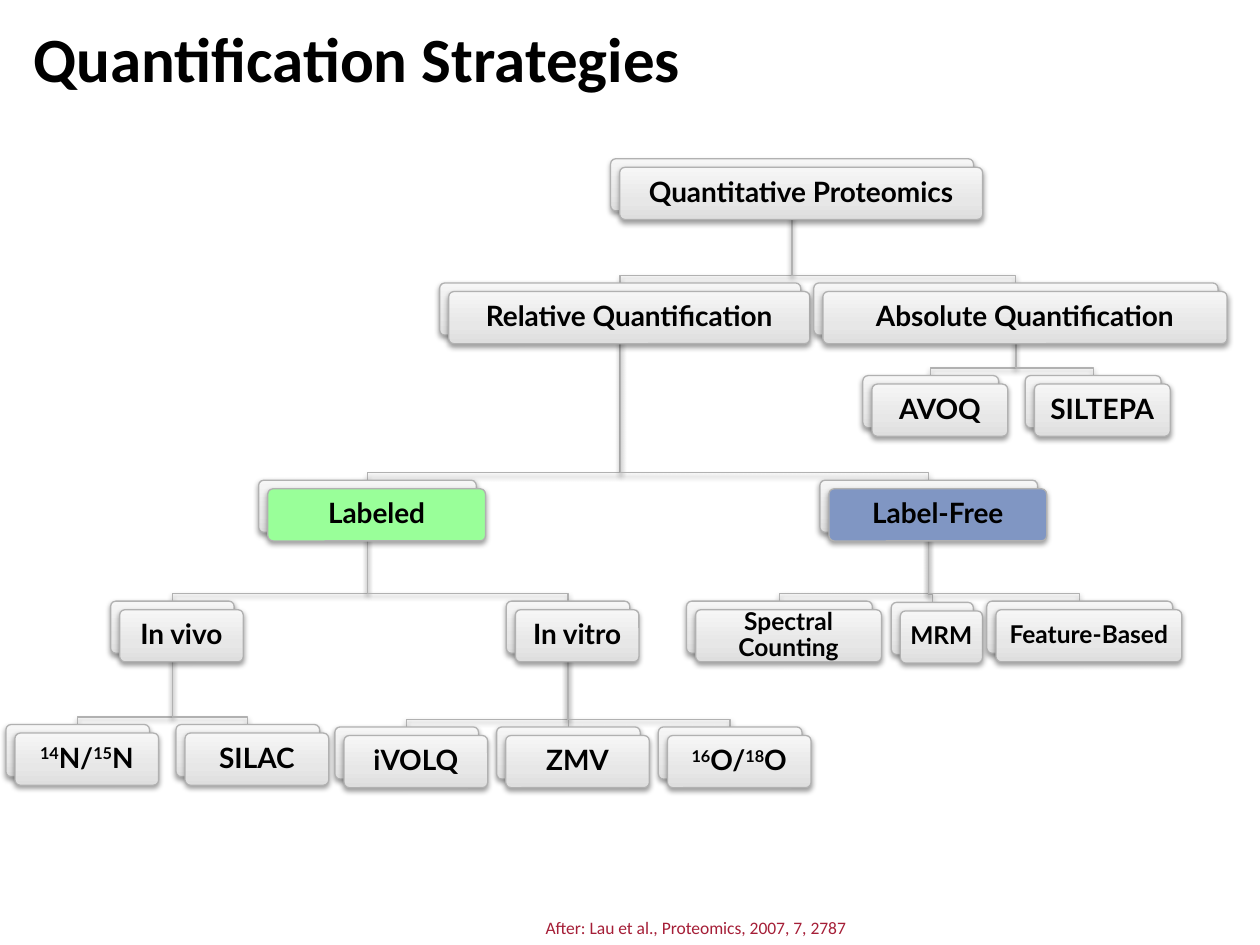
"""Build a slide with a tree of proteomics quantification strategies."""
from copy import deepcopy
from dataclasses import dataclass

from lxml import etree
from pptx import Presentation
from pptx.dml.color import RGBColor
from pptx.enum.shapes import MSO_SHAPE
from pptx.enum.text import MSO_ANCHOR, MSO_AUTO_SIZE, PP_ALIGN
from pptx.oxml.ns import qn
from pptx.util import Pt

ROUNDED = MSO_SHAPE.ROUNDED_RECTANGLE
MIDDLE, TOP = MSO_ANCHOR.MIDDLE, MSO_ANCHOR.TOP
LEFT, CENTER, RIGHT = PP_ALIGN.LEFT, PP_ALIGN.CENTER, PP_ALIGN.RIGHT
FIT_SHAPE, NO_FIT = MSO_AUTO_SIZE.SHAPE_TO_FIT_TEXT, MSO_AUTO_SIZE.NONE

COLORS = {
    "text": "000000",
    "source": "A51E37",
    "outline": "B1B1B1",
    "shadow": "000000",
    "labeled": "99FF99",
    "label_free": "8096C3",
}
CARD_GRADIENT = ((0, "DEDEDE"), (0.35, "E7E7E7"), (1, "F6F6F6"))
CARD_HEIGHT = 29.8
CARD_SHIFT = (5.2, 4.9)
BRANCH_DROP = 4.3
TITLE_FONT = {"name": "Calibri", "size": Pt(36), "bold": True}
SOURCE_FONT = {"name": "Calibri", "size": Pt(10), "bold": False}


@dataclass(frozen=True)
class Strategy:
    """A tree node; carets in the label enclose superscripts."""
    label: str
    parent: str
    left: float
    top: float
    width: float
    size: int = 16
    fill: str = ""

    @property
    def center(self) -> float:
        return self.left + self.width / 2

    @property
    def bottom(self) -> float:
        return self.top + CARD_HEIGHT


STRATEGIES = (
    Strategy("Quantitative Proteomics", "", 348.9, 90.7, 207.4),
    Strategy("Relative Quantification", "Quantitative Proteomics", 251.2, 161.7, 206.4),
    Strategy("Labeled", "Relative Quantification", 147.8, 274.4, 124.4, fill="labeled"),
    Strategy("In vivo", "Labeled", 63.2, 343.5, 70.6),
    Strategy("^14^N/^15^N", "In vivo", 3.4, 414, 82.1),
    Strategy("SILAC", "In vivo", 100.6, 414, 82.1),
    Strategy("In vitro", "Labeled", 289.3, 343.5, 70.6),
    Strategy("iVOLQ", "In vitro", 191.4, 415.4, 82.1),
    Strategy("ZMV", "In vitro", 283.8, 415.4, 82.1),
    Strategy("^16^O/^18^O", "In vitro", 376.2, 415.4, 82.1),
    Strategy("Label-Free", "Relative Quantification", 468.5, 274.4, 124.4, fill="label_free"),
    Strategy("Spectral Counting", "Label-Free", 392.3, 343.5, 106.2, 14),
    Strategy("MRM", "Label-Free", 509.3, 344.2, 46.9, 14),
    Strategy("Feature-Based", "Label-Free", 563.9, 343.5, 106.2, 14),
    Strategy("Absolute Quantification", "Quantitative Proteomics", 465, 161.7, 231),
    Strategy("AVOQ", "Absolute Quantification", 493.1, 214.6, 77.6),
    Strategy("SILTEPA", "Absolute Quantification", 585.9, 214.6, 77.6),
)


def rgb(name: str) -> RGBColor:
    """Look up a named colour."""
    return RGBColor.from_string(COLORS[name])


def apply(target, values: dict) -> None:
    """Set each given attribute on the target."""
    for attribute, value in values.items():
        setattr(target, attribute, value)


def outline_with_shadow(shape) -> None:
    """Give a shape the grey hairline and soft drop shadow."""
    shape.line.color.rgb = rgb("outline")
    shape.line.width = Pt(0.75)
    shape.shadow.inherit = False
    effects = shape._element.spPr.find(qn("a:effectLst"))
    drop = etree.SubElement(effects, qn("a:outerShdw"), blurRad=str(Pt(3.1)),
                            dist=str(Pt(1.6)), dir="5400000", rotWithShape="0")
    tint = etree.SubElement(drop, qn("a:srgbClr"), val=COLORS["shadow"])
    etree.SubElement(tint, qn("a:alpha"), val="38000")


def write(frame, label: str, font: dict, color: str, align, spacing: float = 1) -> None:
    """Write one paragraph, raising the parts enclosed in carets."""
    paragraph = frame.paragraphs[0]
    apply(paragraph, {"alignment": align, "line_spacing": spacing})
    for index, part in enumerate(label.split("^")):
        if part:
            run = paragraph.add_run()
            run.text = part
            apply(run.font, font)
            run.font.color.rgb = rgb(color)
            if index % 2:
                run._r.get_or_add_rPr().set("baseline", "30000")


def draw_branch(slide, parent: Strategy, child: Strategy) -> None:
    """Draw the elbow line from a parent down to its child."""
    elbow = child.top - BRANCH_DROP
    points = ((parent.center, elbow), (child.center, elbow), (child.center, child.top))
    builder = slide.shapes.build_freeform(Pt(parent.center), Pt(parent.bottom))
    builder.add_line_segments([(Pt(x), Pt(y)) for x, y in points], close=False)
    branch = builder.convert_to_shape()
    branch.fill.background()
    outline_with_shadow(branch)


def draw_card(slide, strategy: Strategy, shift: tuple[float, float], fill: str = ""):
    """Draw one rounded card, with the grey gradient unless a fill is named."""
    card = slide.shapes.add_shape(ROUNDED, Pt(strategy.left + shift[0]), Pt(strategy.top + shift[1]),
                                  Pt(strategy.width), Pt(CARD_HEIGHT))
    card.adjustments[0] = 0.1
    if fill:
        card.fill.solid()
        card.fill.fore_color.rgb = rgb(fill)
    else:
        card.fill.gradient()
        card.fill.gradient_angle = 90
        stops = card._element.spPr.find(qn("a:gradFill")).find(qn("a:gsLst"))
        stops.insert(1, deepcopy(stops[0]))
        for stop, (position, color) in zip(card.fill.gradient_stops, CARD_GRADIENT):
            stop.position = position
            stop.color.rgb = RGBColor.from_string(color)
    outline_with_shadow(card)
    return card


def draw_strategy(slide, strategy: Strategy) -> None:
    """Draw a back card and a labelled front card."""
    draw_card(slide, strategy, (0, 0))
    frame = draw_card(slide, strategy, CARD_SHIFT, strategy.fill).text_frame
    inset = Pt(strategy.size * 0.3)
    sides = ("left", "top", "right", "bottom")
    apply(frame, {f"margin_{side}": inset for side in sides})
    apply(frame, {"word_wrap": True, "vertical_anchor": MIDDLE})
    font = {"name": "Lato", "size": Pt(strategy.size), "bold": True}
    write(frame, strategy.label, font, "text", CENTER, 0.9)


def draw_caption(slide, label: str, box: tuple[float, ...], font: dict, color: str,
                 align, layout: dict) -> None:
    """Draw a free-standing text."""
    frame = slide.shapes.add_textbox(*map(Pt, box)).text_frame
    apply(frame, layout)
    write(frame, label, font, color, align)


def main() -> None:
    """Assemble and save the slide."""
    deck = Presentation()
    apply(deck, {"slide_width": Pt(720), "slide_height": Pt(540)})
    slide = deck.slides.add_slide(deck.slide_layouts[6])
    draw_caption(slide, "Quantification Strategies", (12.2, 5.8, 527.8, 54), TITLE_FONT, "text", LEFT,
                 {"word_wrap": True, "vertical_anchor": MIDDLE, "auto_size": NO_FIT})
    by_label = {strategy.label: strategy for strategy in STRATEGIES}
    for strategy in STRATEGIES:
        if strategy.parent:
            draw_branch(slide, by_label[strategy.parent], strategy)
    for strategy in STRATEGIES:
        draw_strategy(slide, strategy)
    draw_caption(slide, "After: Lau et al., Proteomics, 2007, 7, 2787", (301.8, 520.6, 188.6, 19.4),
                 SOURCE_FONT, "source", RIGHT,
                 {"word_wrap": False, "vertical_anchor": TOP, "auto_size": FIT_SHAPE})
    deck.save("out.pptx")


if __name__ == "__main__":
    main()
